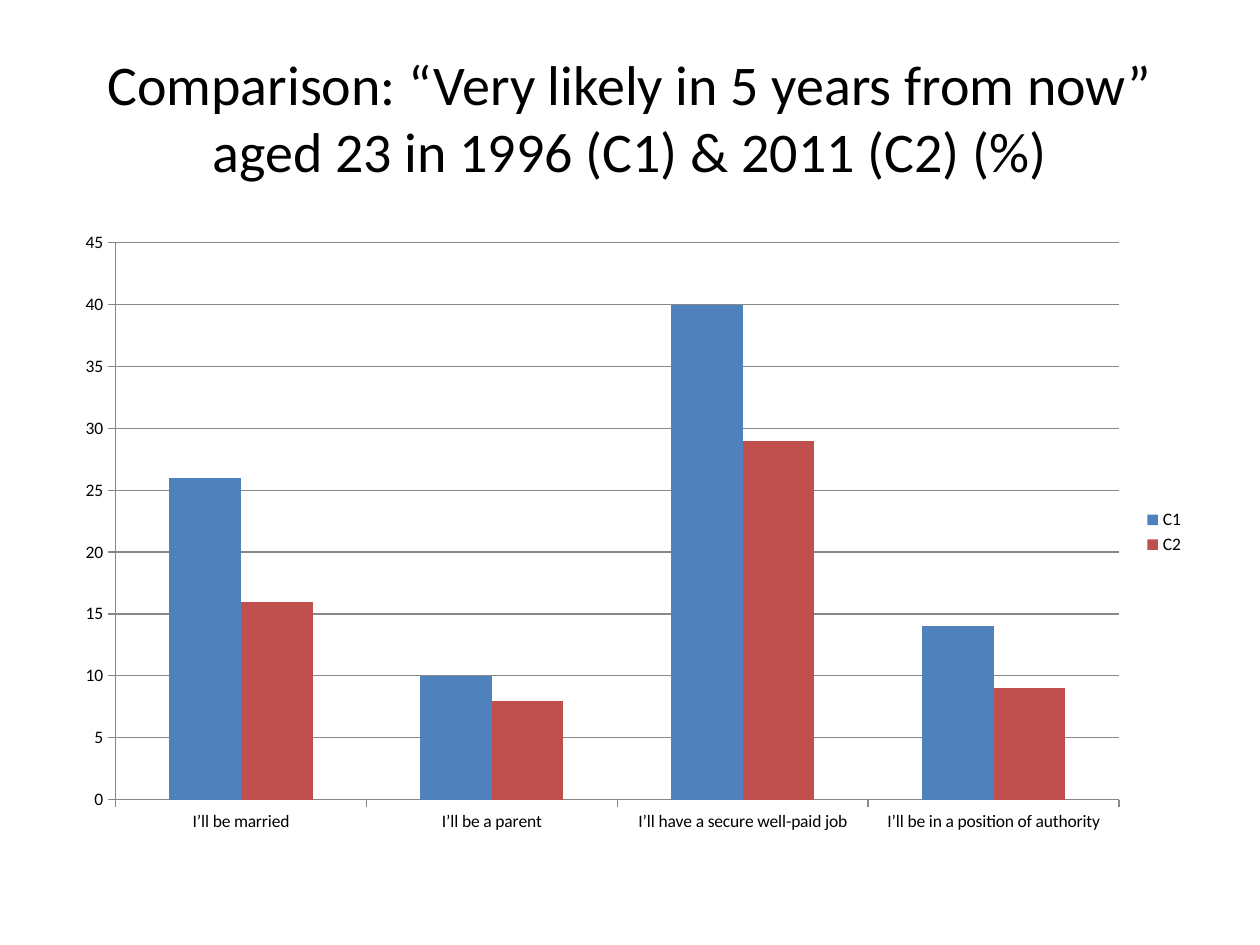
from pptx import Presentation
from pptx.chart.data import CategoryChartData
from pptx.dml.color import RGBColor
from pptx.enum.chart import XL_CHART_TYPE, XL_LEGEND_POSITION, XL_TICK_MARK
from pptx.enum.text import MSO_ANCHOR, PP_ALIGN
from pptx.util import Inches, Pt

FONT = "Calibri"
COLORS = {"text": "000000", "line": "878787", "C1": "4F81BD", "C2": "C0504D"}
TITLE = "Comparison: “Very likely in 5 years from now” aged 23 in 1996 (C1) & 2011 (C2) (%)"
EXPECTATIONS = [
    "I’ll be married",
    "I’ll be a parent",
    "I’ll have a secure well-paid job",
    "I’ll be in a position of authority",
]
COHORTS = {"C1": [26, 10, 40, 14], "C2": [16, 8, 29, 9]}


def color(name):
    return RGBColor.from_string(COLORS[name])


def style_font(font, size):
    font.name = FONT
    font.size = Pt(size)
    font.bold = False
    font.color.rgb = color("text")


def style_line(line):
    line.color.rgb = color("line")
    line.width = Pt(0.75)


def add_title(s):
    sp = s.shapes.add_textbox(Inches(0.5), Inches(0.3), Inches(9), Inches(1.25))
    tf = sp.text_frame
    tf.word_wrap = True
    tf.vertical_anchor = MSO_ANCHOR.MIDDLE
    tf.text = TITLE
    p = tf.paragraphs[0]
    p.alignment = PP_ALIGN.CENTER
    style_font(p.runs[0].font, 32)


def add_cohort_chart(s):
    data = CategoryChartData(number_format="General")
    data.categories = EXPECTATIONS
    for name, values in COHORTS.items():
        data.add_series(name, values)
    chart = s.shapes.add_chart(
        XL_CHART_TYPE.COLUMN_CLUSTERED,
        Inches(0.5), Inches(1.75), Inches(9), Inches(4.95), data,
    ).chart
    style_font(chart.font, 10)
    chart.has_title = False
    chart.has_legend = True
    chart.legend.position = XL_LEGEND_POSITION.RIGHT
    chart.legend.include_in_layout = False

    plot = chart.plots[0]
    plot.gap_width = 150
    plot.overlap = 0
    plot.vary_by_categories = False
    for series in plot.series:
        series.format.fill.solid()
        series.format.fill.fore_color.rgb = color(series.name)

    for axis in (chart.category_axis, chart.value_axis):
        axis.major_tick_mark = XL_TICK_MARK.OUTSIDE
        axis.minor_tick_mark = XL_TICK_MARK.NONE
        style_line(axis.format.line)
    chart.value_axis.minimum_scale = 0
    chart.value_axis.maximum_scale = 45
    chart.value_axis.major_unit = 5
    chart.value_axis.has_major_gridlines = True
    style_line(chart.value_axis.major_gridlines.format.line)


def main():
    prs = Presentation()
    prs.slide_width, prs.slide_height = Inches(10), Inches(7.5)
    s = prs.slides.add_slide(prs.slide_layouts[6])
    add_title(s)
    add_cohort_chart(s)
    prs.save("out.pptx")


if __name__ == "__main__":
    main()
